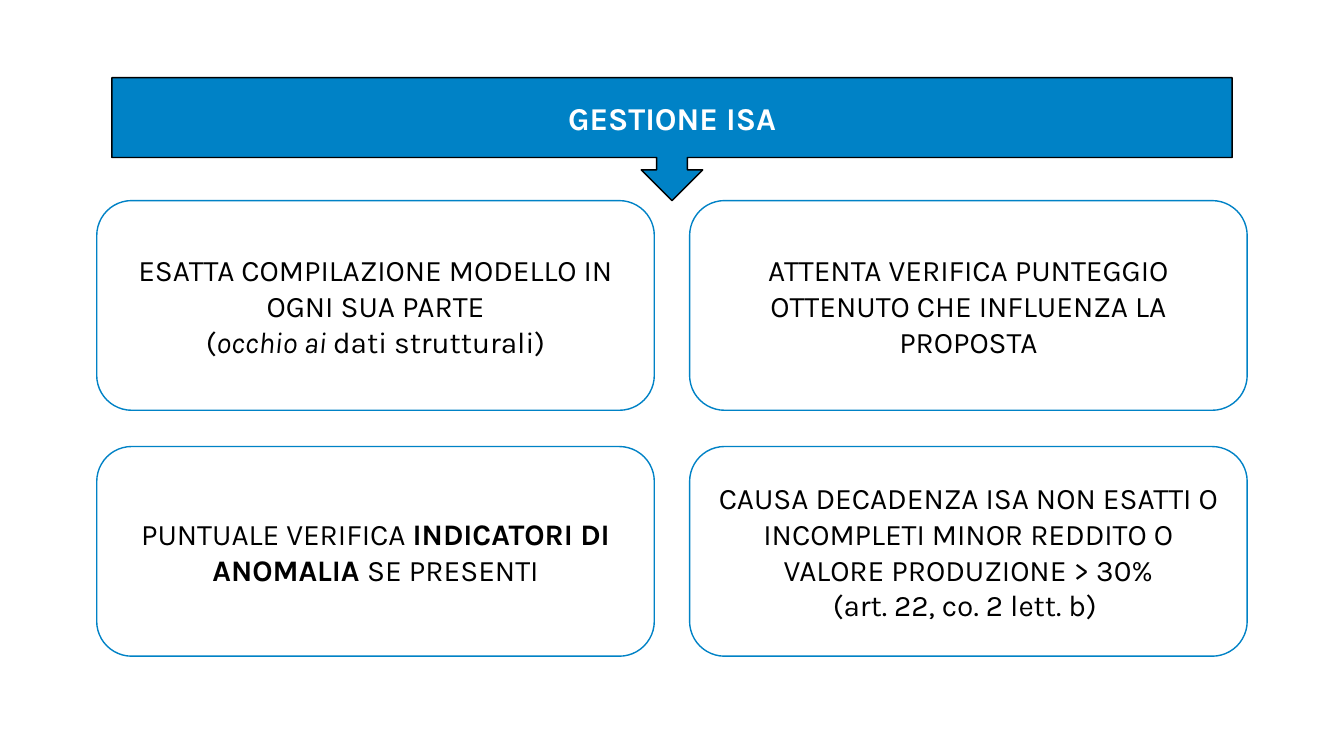
from dataclasses import dataclass

from pptx import Presentation
from pptx.dml.color import RGBColor
from pptx.enum.shapes import MSO_SHAPE as Preset
from pptx.enum.text import MSO_ANCHOR as Anchor, PP_ALIGN as Align
from pptx.shapes.autoshape import Shape
from pptx.slide import Slide
from pptx.text.text import _Paragraph as Paragraph
from pptx.util import Inches, Pt

BLUE = RGBColor(0x00, 0x82, 0xC6)
BLACK = RGBColor(0x00, 0x00, 0x00)
WHITE = RGBColor(0xFF, 0xFF, 0xFF)
FONT = "Karla"
CARD_LEFT, CARD_TOP = 0.96, 1.99
CARD_WIDTH, CARD_HEIGHT = 5.53, 2.08
COLUMN_STEP, ROW_STEP = 5.88, 2.44


@dataclass(frozen=True)
class Span:
    text: str
    bold: bool = False
    italic: bool = False


@dataclass(frozen=True)
class Block:
    preset: Preset
    left: float
    top: float
    width: float
    height: float
    fill: RGBColor
    line: RGBColor
    color: RGBColor
    size: float
    lines: list[list[Span]]


CARD_TEXTS = [
    [
        [Span("ESATTA COMPILAZIONE MODELLO IN OGNI SUA PARTE")],
        [Span("("), Span("occhio ai ", italic=True), Span("dati strutturali)")],
    ],
    [[Span("ATTENTA VERIFICA PUNTEGGIO OTTENUTO CHE INFLUENZA LA PROPOSTA")]],
    [
        [
            Span("PUNTUALE VERIFICA "),
            Span("INDICATORI DI ANOMALIA ", bold=True),
            Span("SE PRESENTI"),
        ]
    ],
    [
        [
            Span(
                "CAUSA DECADENZA ISA NON ESATTI O INCOMPLETI "
                "MINOR REDDITO O VALORE PRODUZIONE > 30%"
            )
        ],
        [Span("(art. 22, co. 2 lett. b) ")],
    ],
]

HEADING = Block(
    Preset.DOWN_ARROW_CALLOUT, 1.11, 0.77, 11.11, 1.22,
    fill=BLUE, line=BLACK, color=WHITE, size=22.7,
    lines=[[Span("GESTIONE ISA", bold=True)]],
)


def make_card(index: int, lines: list[list[Span]]) -> Block:
    row, column = divmod(index, 2)
    return Block(
        Preset.ROUNDED_RECTANGLE,
        CARD_LEFT + column * COLUMN_STEP,
        CARD_TOP + row * ROW_STEP,
        CARD_WIDTH,
        CARD_HEIGHT,
        fill=WHITE, line=BLUE, color=BLACK, size=21.3,
        lines=lines,
    )


def add_text(
    para: Paragraph, text: str, *, size: float, color: RGBColor,
    bold: bool = False, italic: bool = False,
) -> None:
    run = para.add_run()
    run.text = text
    font = run.font
    font.name = FONT
    font.size = Pt(size)
    font.bold = bold
    font.italic = italic
    font.color.rgb = color


def draw_block(page: Slide, block: Block) -> Shape:
    box = page.shapes.add_shape(
        block.preset,
        Inches(block.left), Inches(block.top),
        Inches(block.width), Inches(block.height),
    )
    box.shadow.inherit = False
    box.fill.solid()
    box.fill.fore_color.rgb = block.fill
    box.line.color.rgb = block.line
    box.line.width = Pt(1)
    frame = box.text_frame
    frame.word_wrap = True
    frame.vertical_anchor = Anchor.MIDDLE
    for number, spans in enumerate(block.lines):
        para = frame.add_paragraph() if number else frame.paragraphs[0]
        para.alignment = Align.CENTER
        for span in spans:
            add_text(
                para, span.text, size=block.size, color=block.color,
                bold=span.bold, italic=span.italic,
            )
    return box


def main() -> None:
    deck = Presentation()
    deck.slide_width = Inches(13.33)
    deck.slide_height = Inches(7.5)
    page = deck.slides.add_slide(deck.slide_layouts[6])
    for index, lines in enumerate(CARD_TEXTS):
        draw_block(page, make_card(index, lines))
    draw_block(page, HEADING)
    deck.save("out.pptx")


if __name__ == "__main__":
    main()
